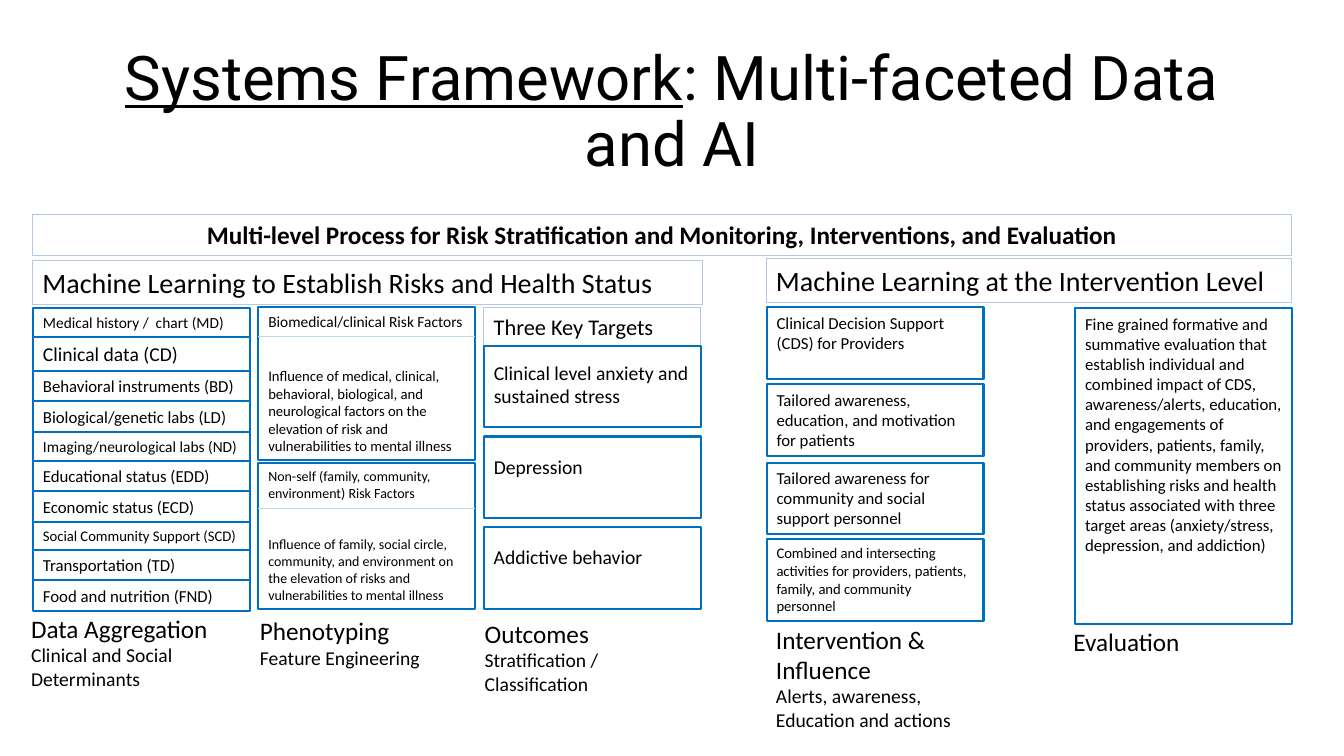
import pptx
import pptx.dml.color
import pptx.enum.shapes
import pptx.enum.text
import pptx.oxml.ns
import pptx.util
from dataclasses import dataclass
from lxml import etree
from typing import Any, Optional

Pt = pptx.util.Pt
PP = pptx.enum.text.PP_ALIGN
ANCHOR = pptx.enum.text.MSO_ANCHOR


@dataclass(frozen=True)
class Theme:
    text: str = "000000"
    strong: str = "0070C0"
    soft: str = "B4C7E7"
    divider: str = "BDD7EE"
    body_font: str = "Calibri"
    title_font: str = "Roboto"
    title: float = 44
    section: float = 20
    heading: float = 18
    subhead: float = 16
    item: float = 14
    body: float = 12
    small: float = 11
    compact: float = 10.5
    tiny: float = 10


T = Theme()


@dataclass(frozen=True)
class Outline:
    color: str
    width: float


STRONG = Outline(T.strong, 1.5)
SOFT = Outline(T.soft, 0.75)
DIVIDER = Outline(T.divider, 0.5)


@dataclass(frozen=True)
class Para:
    text: str
    size: float
    before: float = 0
    bold: bool = False
    underlined_lead: str = ""
    font: str = T.body_font
    line_spacing: float = 1.0


@dataclass(frozen=True)
class Box:
    left: float
    top: float
    width: float
    height: float
    paras: tuple[Para, ...] = ()
    outline: Optional[Outline] = None
    align: Any = PP.LEFT
    anchor: Any = ANCHOR.TOP


@dataclass(frozen=True)
class Rule:
    left: float
    top: float
    width: float
    outline: Outline = DIVIDER


def apply(target: Any, values: dict[str, Any]) -> None:
    for name, value in values.items():
        setattr(target, name, value)


def rgb(color: str) -> pptx.dml.color.RGBColor:
    return pptx.dml.color.RGBColor.from_string(color)


def draw_outline(line: Any, outline: Outline) -> None:
    line.color.rgb = rgb(outline.color)
    line.width = Pt(outline.width)


def add_run(p: Any, para: Para, text: str, underline: bool) -> None:
    r = p.add_run()
    r.text = text
    apply(r.font, {"name": para.font, "size": Pt(para.size), "bold": para.bold, "underline": underline})
    r.font.color.rgb = rgb(T.text)


def draw_box(s: Any, box: Box) -> None:
    frame = [Pt(v) for v in (box.left, box.top, box.width, box.height)]
    if box.outline:
        sp = s.shapes.add_shape(pptx.enum.shapes.MSO_SHAPE.RECTANGLE, *frame)
        sp.shadow.inherit = False
        sp.fill.background()
        draw_outline(sp.line, box.outline)
    else:
        sp = s.shapes.add_textbox(*frame)
    tf = sp.text_frame
    apply(tf, {"word_wrap": True, "vertical_anchor": box.anchor})
    for i, para in enumerate(box.paras):
        p = tf.add_paragraph() if i else tf.paragraphs[0]
        apply(p, {"alignment": box.align, "space_before": Pt(para.before), "line_spacing": para.line_spacing})
        if para.underlined_lead:
            add_run(p, para, para.underlined_lead, True)
        add_run(p, para, para.text, False)


def draw_rule(s: Any, rule: Rule) -> None:
    y = Pt(rule.top)
    cxn = s.shapes.add_connector(
        pptx.enum.shapes.MSO_CONNECTOR.STRAIGHT, Pt(rule.left), y, Pt(rule.left + rule.width), y)
    draw_outline(cxn.line, rule.outline)
    etree.SubElement(cxn._element.spPr, pptx.oxml.ns.qn("a:effectLst"))


COLUMN = 155
DATA_X, FEATURE_X, TARGET_X, ACTION_X, EVALUATION_X = 23.6, 184.6, 345.6, 547.6, 768

DATA_SOURCES = (
    Para("Medical history /  chart (MD)", T.small),
    Para("Clinical data (CD)", T.item),
    Para("Behavioral instruments (BD)", T.body),
    Para("Biological/genetic labs (LD)", T.body),
    Para("Imaging/neurological labs (ND)", T.small),
    Para("Educational status (EDD)", T.body),
    Para("Economic status (ECD)", T.body),
    Para("Social Community Support (SCD)", T.compact),
    Para("Transportation (TD)", T.body),
    Para("Food and nutrition (FND)", T.body),
)
TARGETS = (
    ("Clinical level anxiety and sustained stress", 7.2, 190.8, 41),
    ("Depression", 9.4, 123, 24.5),
    ("Addictive behavior", 9.4, COLUMN, 24.5),
)
ACTIONS = (
    (219.6, 51, Para("Clinical Decision Support (CDS) for Providers", T.body)),
    (274.6, 51, Para("Tailored awareness, education, and motivation for patients", T.body)),
    (330.4, 51, Para("Tailored awareness for community and social support personnel", T.body)),
    (385.2, 58.3, Para("Combined and intersecting activities for providers, patients, family, "
                       "and community personnel", T.compact)),
)
STAGES = (
    (15.1, 434.2, 163.4, ("Data Aggregation",), ("Clinical and Social", "Determinants")),
    (178.6, 436.3, 252.7, ("Phenotyping",), ("Feature Engineering",)),
    (339.1, 437.8, 160.6, ("Outcomes",), ("Stratification /", "Classification")),
    (547.2, 442.1, 212.4, ("Intervention &", "Influence"), ("Alerts, awareness,", "Education and actions")),
    (759.6, 444.2, 148.3, ("Evaluation",), ()),
)
BOXES = (
    Box(66, 28.8, 828, 104.4,
        (Para(": Multi-faceted Data and AI", T.title, underlined_lead="Systems Framework",
              font=T.title_font, line_spacing=0.9),), align=PP.CENTER, anchor=ANCHOR.MIDDLE),
    Box(23.2, 153.4, 899.3, 29,
        (Para("Multi-level Process for Risk Stratification and Monitoring, Interventions, and Evaluation",
              T.heading, bold=True),), SOFT, PP.CENTER),
    Box(23.2, 185.9, 478.8, 31.5,
        (Para("Machine Learning to Establish Risks and Health Status", T.section),), SOFT),
    Box(547.2, 184.8, 375.3, 31.5, (Para("Machine Learning at the Intervention Level", T.section),), SOFT),
    Box(FEATURE_X, 219.6, COLUMN, 109,
        (Para("Biomedical/clinical Risk Factors", T.small),
         Para("Influence of medical, clinical, behavioral, biological, and neurological factors on the "
              "elevation of risk and vulnerabilities to mental illness", T.compact, before=25.6)), STRONG),
    Box(FEATURE_X, 330.6, COLUMN, 104.4,
        (Para("Non-self (family, community, environment) Risk Factors", T.tiny),
         Para("Influence of family, social circle, community, and environment on the elevation of risks "
              "and vulnerabilities to mental illness", T.tiny, before=24.4)), STRONG),
    Box(TARGET_X, 219.8, COLUMN, 26.7, (Para("Three Key Targets", T.subhead),), SOFT),
    Box(EVALUATION_X, 220.3, COLUMN, 225.4,
        (Para("Fine grained formative and summative evaluation that establish individual and combined "
              "impact of CDS, awareness/alerts, education, and engagements of providers, patients, family, "
              "and community members on establishing risks and health status associated with three target "
              "areas (anxiety/stress, depression, and addiction)", T.body),), STRONG),
)
RULES = (Rule(FEATURE_X, 240.5, COLUMN), Rule(FEATURE_X, 362.9, COLUMN))


def main() -> None:
    prs = pptx.Presentation()
    apply(prs, {"slide_width": Pt(960), "slide_height": Pt(540)})
    s = prs.slides.add_slide(prs.slide_layouts[6])
    for box in BOXES:
        draw_box(s, box)
    for rule in RULES:
        draw_rule(s, rule)
    top = 220.0
    for para in DATA_SOURCES:
        height = round(para.size * 1.22 + 7.2, 1)
        draw_box(s, Box(DATA_X, top, COLUMN, height, (para,), STRONG))
        top += height
    for i, (text, offset, width, height) in enumerate(TARGETS):
        top = 247 + 64.8 * i
        draw_box(s, Box(TARGET_X, top, COLUMN, 58.3, outline=STRONG))
        draw_box(s, Box(TARGET_X, top + offset, width, height, (Para(text, T.item),)))
    for top, height, para in ACTIONS:
        draw_box(s, Box(ACTION_X, top, COLUMN, height, (para,), STRONG))
    for left, top, width, names, details in STAGES:
        paras = tuple(Para(n, T.heading) for n in names) + tuple(Para(d, T.item) for d in details)
        height = round(sum(p.size for p in paras) * 1.22 + 7.2, 1)
        draw_box(s, Box(left, top, width, height, paras))
    prs.save("out.pptx")


if __name__ == "__main__":
    main()
